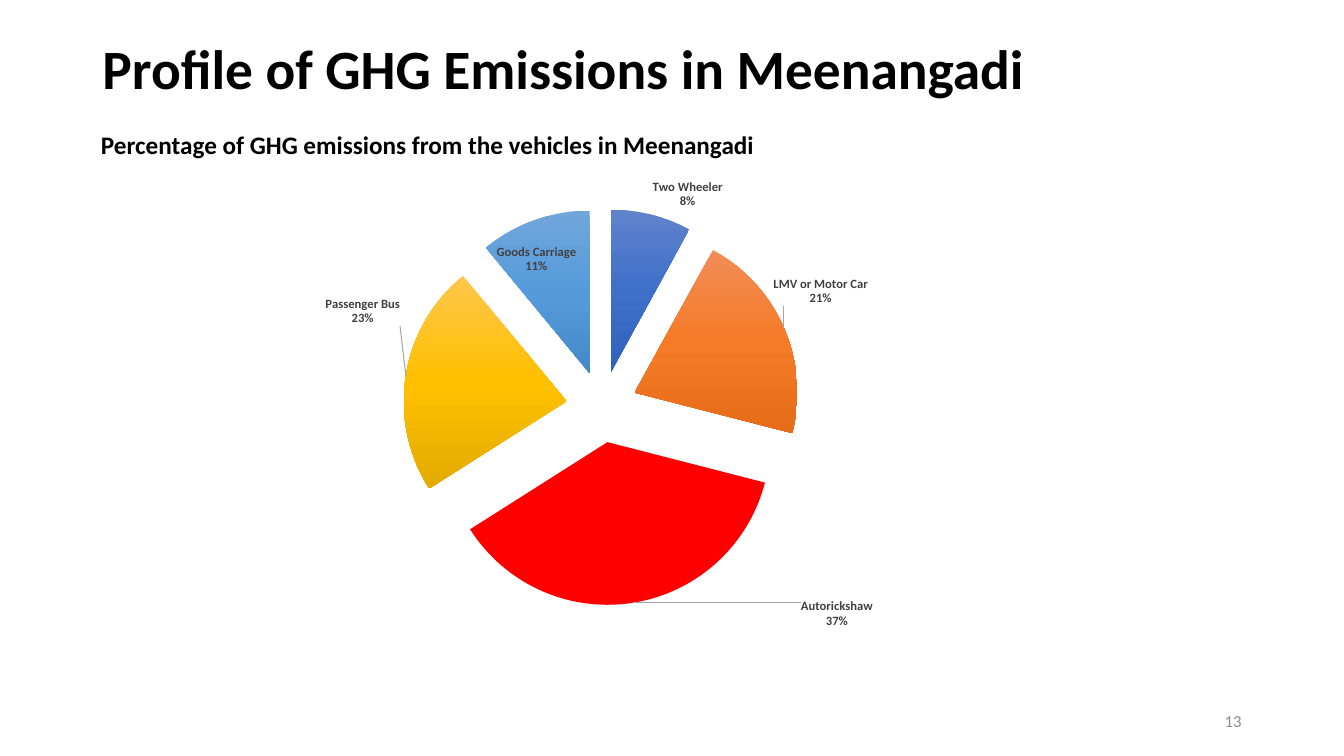
from lxml import etree
from pptx import Presentation
from pptx.chart.data import CategoryChartData
from pptx.dml.color import RGBColor
from pptx.enum.chart import XL_CHART_TYPE, XL_LABEL_POSITION
from pptx.enum.text import MSO_ANCHOR, PP_ALIGN
from pptx.oxml.ns import qn
from pptx.util import Pt

PIE = XL_CHART_TYPE.PIE
OUT, FIT = XL_LABEL_POSITION.OUTSIDE_END, XL_LABEL_POSITION.BEST_FIT
LEFT, RIGHT = PP_ALIGN.LEFT, PP_ALIGN.RIGHT
TOP, MID = MSO_ANCHOR.TOP, MSO_ANCHOR.MIDDLE
FONT = "Calibri"
INK = {"text": "000000", "label": "404040", "page": "8C8C8C", "leader": "A6A6A6"}
# name, share, colours from top to bottom, label shift as a share of the chart
SLICES = [
    ("Two Wheeler", 0.08, ["6183CB", "3E70CA", "3062BB"], None),
    ("LMV or Motor Car", 0.21, ["F18C57", "F67B28", "E56C19"], (-0.02, -0.04)),
    ("Autorickshaw", 0.37, ["FF0000"], (0.21, -0.02)),
    ("Passenger Bus", 0.23, ["FFC64B", "FFC000", "E3AB00"], (0, -0.1)),
    ("Goods Carriage", 0.11, ["71A6DB", "559BDB", "448ACA"], None),
]


def style(font, size, color, bold=False):
    font.name, font.size, font.bold = FONT, Pt(size), bold
    font.color.rgb = RGBColor.from_string(color)


def write(shape, text, size=18, color=INK["text"], bold=False, align=LEFT, anchor=TOP):
    frame = shape.text_frame
    frame.word_wrap = True
    frame.vertical_anchor = anchor
    par = frame.paragraphs[0]
    par.alignment = align
    run = par.add_run()
    run.text = text
    style(run.font, size, color, bold)
    return par


def place(shape, box):
    shape.left, shape.top, shape.width, shape.height = (Pt(n) for n in box)


def node(tag, **attrs):
    return etree.Element(qn(tag), attrs)


def layout(**marks):
    """Manual chart layout made of the given marks."""
    root = node("c:layout")
    man = etree.SubElement(root, qn("c:manualLayout"))
    for key, val in marks.items():
        man.append(node("c:" + key, val=str(val)))
    return root


def shade(fill, colors):
    if len(colors) == 1:
        fill.solid()
        fill.fore_color.rgb = RGBColor.from_string(colors[0])
        return None
    fill.gradient()
    fill.gradient_angle = 270
    return colors


def stops(point, colors):
    """Replace the gradient stops of one slice with evenly spaced colours."""
    group = point.find(".//" + qn("a:gsLst"))
    for old in list(group):
        group.remove(old)
    for i, color in enumerate(colors):
        stop = node("a:gs", pos=str(100000 * i // (len(colors) - 1)))
        stop.append(node("a:srgbClr", val=color))
        group.append(stop)


def split(labels):
    """Show the category above the value."""
    labels.find(qn("c:showCatName")).set("val", "1")
    gap = node("c:separator")
    gap.text = "\n"
    labels.find(qn("c:showBubbleSize")).addnext(gap)


def shift(label, move):
    idx = label.find(qn("c:idx"))
    idx.addnext(node("c:numFmt", formatCode="0%", sourceLinked="0"))
    idx.addnext(layout(x=move[0], y=move[1]))
    split(label)


def leaders(labels):
    show = labels.find(qn("c:showLeaderLines"))
    if show is None:
        show = node("c:showLeaderLines")
        labels.append(show)
    show.set("val", "1")
    lines = node("c:leaderLines")
    props = etree.SubElement(lines, qn("c:spPr"))
    line = etree.SubElement(props, qn("a:ln"), w="9525")
    fill = etree.SubElement(line, qn("a:solidFill"))
    fill.append(node("a:srgbClr", val=INK["leader"]))
    show.addnext(lines)


def pie(slide, box):
    data = CategoryChartData(number_format="0%")
    data.categories = [name for name, *_ in SLICES]
    data.add_series("Series 1", [part[1] for part in SLICES])
    chart = slide.shapes.add_chart(PIE, *(Pt(n) for n in box), data).chart
    chart.has_title = chart.has_legend = False
    style(chart.font, 10, INK["text"])
    plot = chart.plots[0]
    plot.vary_by_categories = True
    series = plot.series[0]
    ser = chart.element.find(".//" + qn("c:ser"))
    ser.find(qn("c:tx")).addnext(node("c:explosion", val="22"))

    labels = series.data_labels
    style(labels.font, 9, INK["label"], True)
    labels.number_format, labels.number_format_is_linked = "0%", False
    labels.show_value = True
    labels.position = FIT
    group = ser.find(qn("c:dLbls"))
    split(group)
    leaders(group)

    for i, (_, _, colors, move) in enumerate(SLICES):
        point = series.points[i]
        if shade(point.format.fill, colors):
            stops(ser.findall(qn("c:dPt"))[-1], colors)
        if move:
            style(point.data_label.font, 9, INK["label"], True)
            point.data_label.position = OUT
            shift(group.findall(qn("c:dLbl"))[-1], move)

    area = chart.element.find(".//" + qn("c:plotArea"))
    for old in area.findall(qn("c:layout")):
        area.remove(old)
    area.insert(0, layout(layoutTarget="inner", xMode="edge", yMode="edge",
                          x=0.24, y=0.09, w=0.5, h=0.81))


def heading(slide, box):
    x, y, w, h = box
    title = slide.shapes.title
    place(title, (x, y, w, h))
    par = write(title, "Profile of GHG Emissions in Meenangadi", size=39.6,
                bold=True, anchor=MID)
    par.line_spacing = 0.9
    sub = slide.shapes.add_textbox(0, 0, 0, 0)
    place(sub, (x - 1, y + 60, w, 29))
    write(sub, "Percentage of GHG emissions from the vehicles in Meenangadi", bold=True)


def footer(slide, box):
    page = slide.shapes.add_textbox(*(Pt(n) for n in box))
    write(page, "13", size=12, color=INK["page"], align=RIGHT, anchor=MID)


def main():
    deck = Presentation()
    deck.slide_width, deck.slide_height = Pt(960), Pt(540)
    slide = deck.slides.add_slide(deck.slide_layouts[5])
    heading(slide, (66, 28.8, 771, 44.6))
    pie(slide, (151.2, 117.4, 568.8, 350))
    footer(slide, (678, 500.4, 216, 28.8))
    deck.save("out.pptx")


if __name__ == "__main__":
    main()
